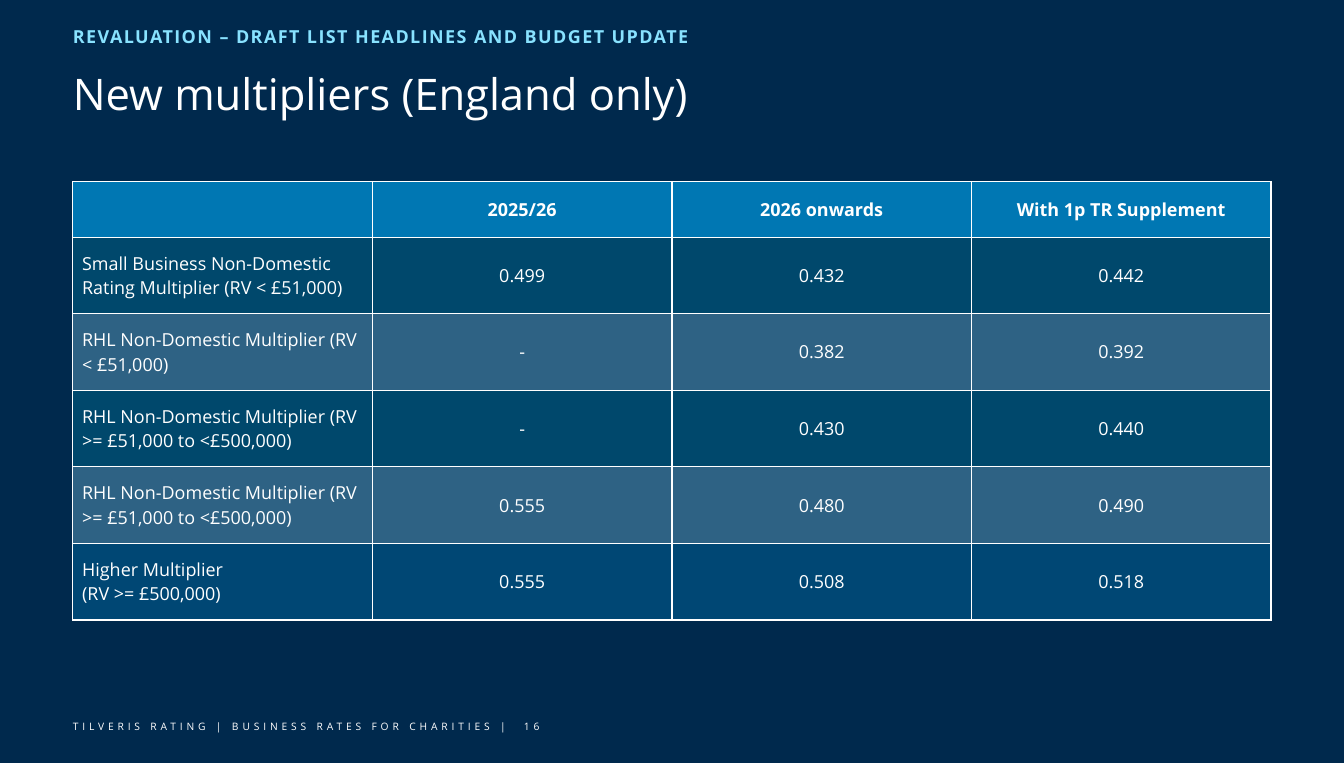
from dataclasses import dataclass

from lxml import etree
from pptx import Presentation
from pptx.dml.color import RGBColor
from pptx.enum import text
from pptx.oxml import ns
from pptx.util import Inches, Pt


@dataclass(frozen=True)
class Theme:
    font: str = "Open Sans"
    background: str = "00294D"
    white: str = "FFFFFF"
    sky: str = "88E2FF"
    blue: str = "0077B3"
    teal: str = "017B9F"
    pale: str = "79BEDD"
    title_size: float = 34
    text_size: float = 14
    footer_size: float = 8
    row_opacity: int = 39


@dataclass(frozen=True)
class Label:
    text: str
    left: float
    top: float
    width: float
    height: float
    size: float
    color: str
    tracking: float = 0
    bold: bool = False
    line_spacing: float = 1.0
    space_after: float = 6


@dataclass(frozen=True)
class Row:
    cells: tuple[str, str, str, str]
    color: str
    height: float = 0.83
    header: bool = False


THEME = Theme()
MARGIN = 0.79
CONTENT_WIDTH = 12.99

TITLE = Label("New multipliers (England only)", MARGIN, 0.79, CONTENT_WIDTH, 0.55,
              THEME.title_size, THEME.white, line_spacing=0.9, space_after=7.5)
LABELS = [
    Label("TILVERIS RATING | BUSINESS RATES FOR CHARITIES |", MARGIN, 7.81, 5.07, 0.46,
          THEME.footer_size, THEME.white, tracking=3),
    Label("16", 5.68, 7.81, 0.32, 0.23, THEME.footer_size, THEME.white, tracking=3),
    Label("REVALUATION – DRAFT LIST HEADLINES AND BUDGET UPDATE", MARGIN, 0.25,
          CONTENT_WIDTH, 0.34, THEME.text_size, THEME.sky, tracking=1.1, bold=True,
          line_spacing=1.1, space_after=3),
]
ROWS = [
    Row(("", "2025/26", "2026 onwards", "With 1p TR Supplement"), THEME.blue, 0.6, True),
    Row(("Small Business Non-Domestic Rating Multiplier (RV < £51,000)",
         "0.499", "0.432", "0.442"), THEME.teal),
    Row(("RHL Non-Domestic Multiplier (RV < £51,000)", "-", "0.382", "0.392"), THEME.pale),
    Row(("RHL Non-Domestic Multiplier (RV >= £51,000 to <£500,000)",
         "-", "0.430", "0.440"), THEME.teal),
    Row(("RHL Non-Domestic Multiplier (RV >= £51,000 to <£500,000)",
         "0.555", "0.480", "0.490"), THEME.pale),
    Row(("Higher Multiplier\v(RV >= £500,000)", "0.555", "0.508", "0.518"), THEME.blue),
]


def set_font(p, size: float, color: str, bold: bool) -> None:
    p.font.name = THEME.font
    p.font.size = Pt(size)
    p.font.bold = bold
    p.font.color.rgb = RGBColor.from_string(color)


def write_label(sp, label: Label) -> None:
    """Place the shape and give it the label's text and format."""
    sp.left, sp.top = Inches(label.left), Inches(label.top)
    sp.width, sp.height = Inches(label.width), Inches(label.height)
    tf = sp.text_frame
    tf.word_wrap = True
    tf.auto_size = text.MSO_AUTO_SIZE.NONE
    tf.vertical_anchor = text.MSO_ANCHOR.TOP
    tf.margin_left = tf.margin_top = tf.margin_right = tf.margin_bottom = 0
    p = tf.paragraphs[0]
    p.alignment = text.PP_ALIGN.LEFT
    p.line_spacing = label.line_spacing
    p.space_before = Pt(0)
    p.space_after = Pt(label.space_after)
    r = p.add_run()
    r.text = label.text
    set_font(p, label.size, label.color, label.bold)
    if label.tracking:
        r._r.get_or_add_rPr().set("spc", str(round(label.tracking * 100)))


def add_borders(cell) -> None:
    """Line all four sides; call before the fill, which must follow in the XML."""
    tc_pr = cell._tc.get_or_add_tcPr()
    for side in ("a:lnL", "a:lnR", "a:lnT", "a:lnB"):
        line = etree.SubElement(tc_pr, ns.qn(side), w=str(Pt(1)))
        fill = etree.SubElement(line, ns.qn("a:solidFill"))
        etree.SubElement(fill, ns.qn("a:srgbClr"), val=THEME.white)


def fill_cell(cell, row: Row) -> None:
    cell.fill.solid()
    cell.fill.fore_color.rgb = RGBColor.from_string(row.color)
    if not row.header:
        color = cell._tc.tcPr.find(f"{ns.qn('a:solidFill')}/{ns.qn('a:srgbClr')}")
        etree.SubElement(color, ns.qn("a:alpha"), val=str(THEME.row_opacity * 1000))


def add_multiplier_table(slide, rows: list[Row]) -> None:
    columns = len(rows[0].cells)
    height = sum(row.height for row in rows)
    table = slide.shapes.add_table(len(rows), columns, Inches(MARGIN), Inches(1.97),
                                   Inches(CONTENT_WIDTH), Inches(height)).table
    table.first_row = table.horz_banding = False
    for i, row in enumerate(rows):
        table.rows[i].height = Inches(row.height)
        for j, content in enumerate(row.cells):
            cell = table.cell(i, j)
            add_borders(cell)
            fill_cell(cell, row)
            cell.vertical_anchor = text.MSO_ANCHOR.MIDDLE
            cell.text = content
            p = cell.text_frame.paragraphs[0]
            p.alignment = text.PP_ALIGN.CENTER if j else text.PP_ALIGN.LEFT
            set_font(p, THEME.text_size, THEME.white, row.header)


def main() -> None:
    prs = Presentation()
    prs.slide_width, prs.slide_height = Inches(14.57), Inches(8.27)
    slide = prs.slides.add_slide(prs.slide_layouts.get_by_name("Title Only"))
    slide.background.fill.solid()
    slide.background.fill.fore_color.rgb = RGBColor.from_string(THEME.background)
    write_label(slide.shapes.title, TITLE)
    add_multiplier_table(slide, ROWS)
    for label in LABELS:
        write_label(slide.shapes.add_textbox(0, 0, 0, 0), label)
    prs.save("out.pptx")


if __name__ == "__main__":
    main()
